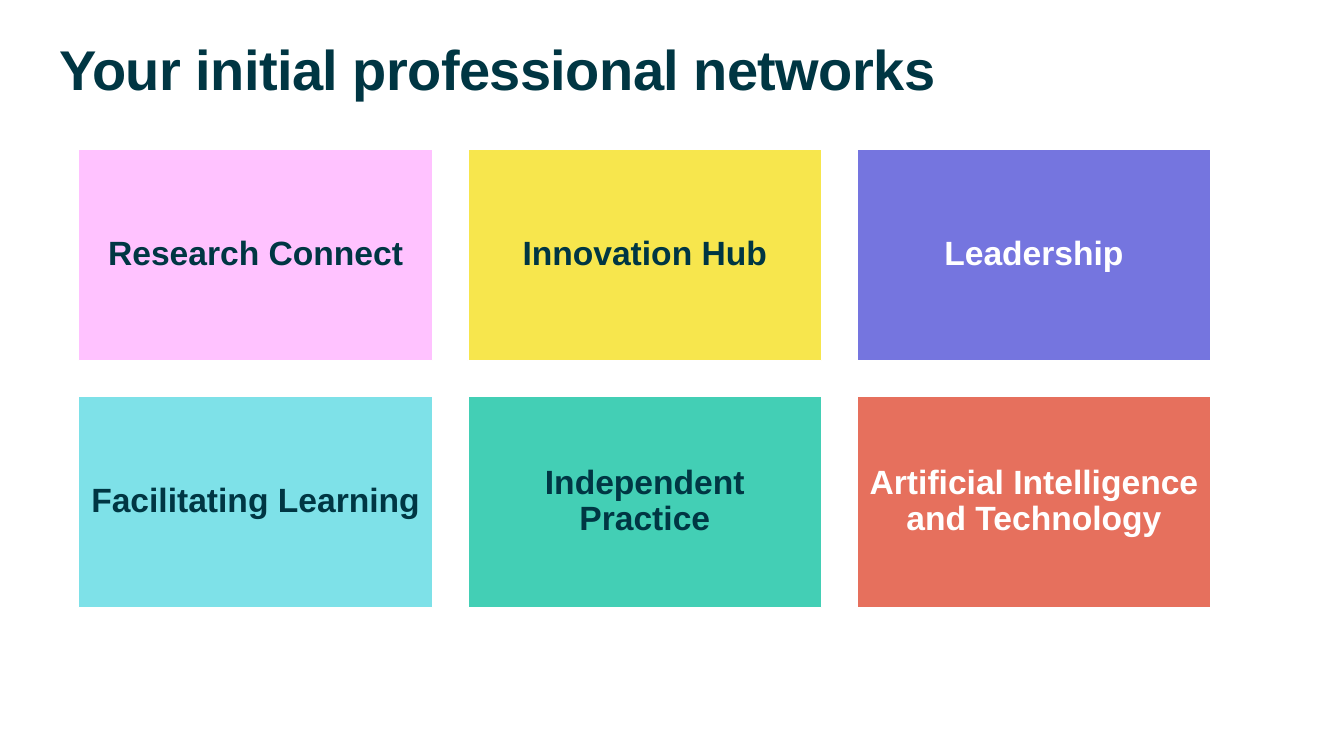
from dataclasses import dataclass

from pptx import Presentation
from pptx.dml.color import RGBColor
from pptx.enum.shapes import MSO_SHAPE
from pptx.enum.text import MSO_ANCHOR, MSO_AUTO_SIZE, PP_ALIGN
from pptx.util import Inches, Pt

RECTANGLE = MSO_SHAPE.RECTANGLE
TOP, MIDDLE = MSO_ANCHOR.TOP, MSO_ANCHOR.MIDDLE
LEFT, CENTER = PP_ALIGN.LEFT, PP_ALIGN.CENTER
NO_AUTOFIT = MSO_AUTO_SIZE.NONE
TITLE_ONLY = 5


@dataclass(frozen=True)
class Theme:
    font: str = "Arial"
    dark: str = "003643"
    white: str = "FFFFFF"
    pink: str = "FFC2FF"
    yellow: str = "F7E64D"
    violet: str = "7575DF"
    sky: str = "7EE1E8"
    green: str = "43CFB5"
    coral: str = "E6705D"
    title_size: int = 40
    card_size: int = 24
    line_spacing: float = 0.9


THEME = Theme()
NETWORKS = [
    ("Research Connect", THEME.pink, THEME.dark),
    ("Innovation Hub", THEME.yellow, THEME.dark),
    ("Leadership", THEME.violet, THEME.white),
    ("Facilitating Learning", THEME.sky, THEME.dark),
    ("Independent Practice", THEME.green, THEME.dark),
    ("Artificial Intelligence and Technology", THEME.coral, THEME.white),
]
COLUMNS = 3
GRID_LEFT, GRID_TOP = 0.78, 1.48
CARD_WIDTH, CARD_HEIGHT = 3.51, 2.1
GAP = 0.35


def write_text(shape, text, size, color, alignment, anchor, inset):
    frame = shape.text_frame
    frame.word_wrap = True
    frame.auto_size = NO_AUTOFIT
    frame.vertical_anchor = anchor
    frame.margin_left = frame.margin_right = Inches(inset)
    frame.margin_top = frame.margin_bottom = Inches(inset)
    paragraph = frame.paragraphs[0]
    paragraph.alignment = alignment
    paragraph.line_spacing = THEME.line_spacing
    paragraph.space_before = Pt(0)
    run = paragraph.add_run()
    run.text = text
    run.font.name = THEME.font
    run.font.size = Pt(size)
    run.font.bold = True
    run.font.color.rgb = RGBColor.from_string(color)
    return run


def set_title(slide, text):
    title = slide.shapes.title
    title.left, title.top = Inches(0.59), Inches(0.42)
    title.width, title.height = Inches(12.2), Inches(0.79)
    run = write_text(title, text, THEME.title_size, THEME.dark, LEFT, TOP, 0)
    run.font._element.set("spc", "-40")


def add_card(slide, left, top, text, fill, color):
    card = slide.shapes.add_shape(
        RECTANGLE, Inches(left), Inches(top), Inches(CARD_WIDTH), Inches(CARD_HEIGHT)
    )
    card.shadow.inherit = False
    card.fill.solid()
    card.fill.fore_color.rgb = RGBColor.from_string(fill)
    card.line.color.rgb = RGBColor.from_string(THEME.white)
    card.line.width = Pt(1)
    write_text(card, text, THEME.card_size, color, CENTER, MIDDLE, 0.1)


def main():
    presentation = Presentation()
    presentation.slide_width = Inches(13.33)
    presentation.slide_height = Inches(7.5)
    slide = presentation.slides.add_slide(presentation.slide_layouts[TITLE_ONLY])
    set_title(slide, "Your initial professional networks")
    for index, (text, fill, color) in enumerate(NETWORKS):
        row, column = divmod(index, COLUMNS)
        left = GRID_LEFT + column * (CARD_WIDTH + GAP)
        top = GRID_TOP + row * (CARD_HEIGHT + GAP)
        add_card(slide, left, top, text, fill, color)
    presentation.save("out.pptx")


if __name__ == "__main__":
    main()
